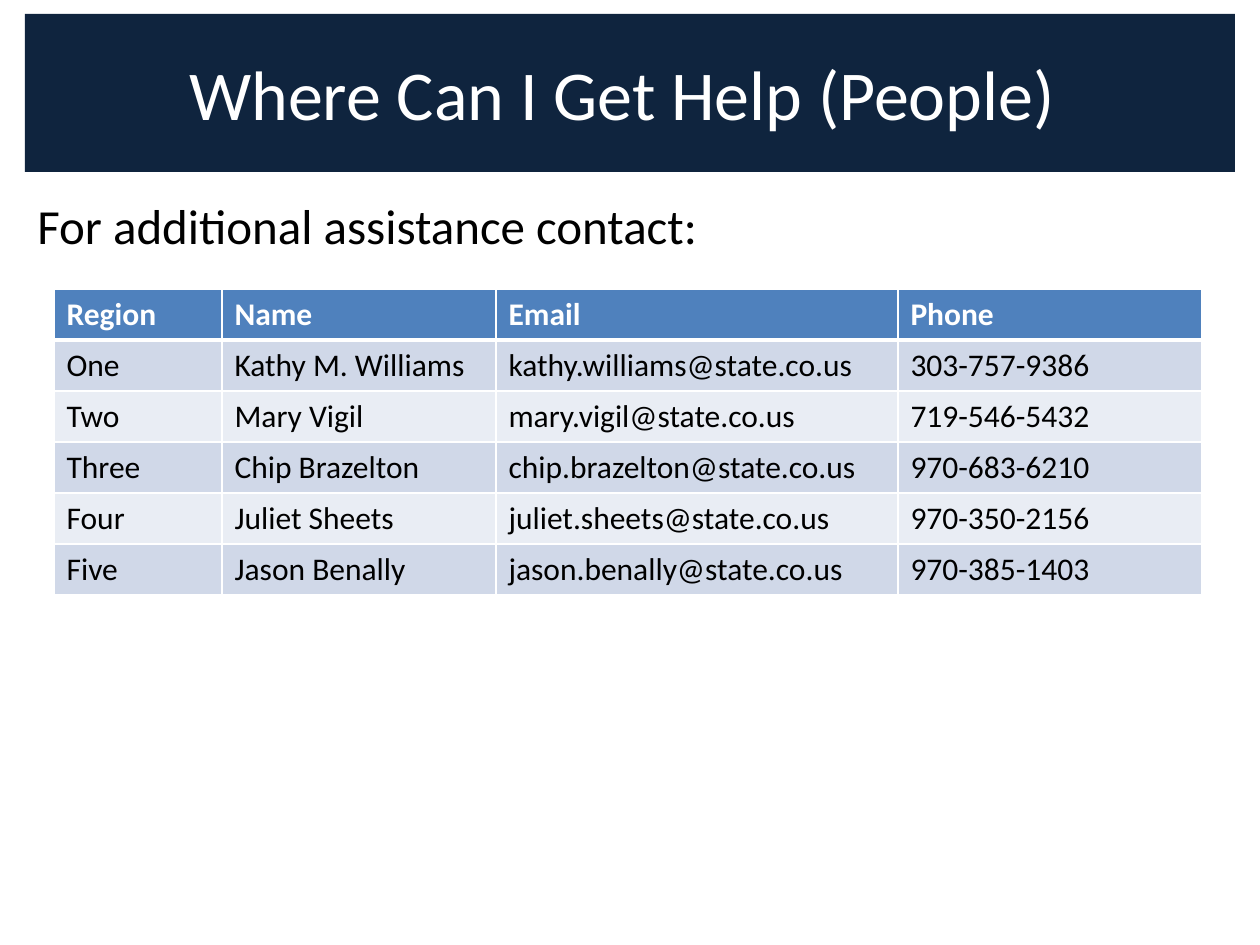
from dataclasses import dataclass

from lxml import etree
from pptx import Presentation
from pptx.dml.color import RGBColor
from pptx.enum.shapes import MSO_SHAPE
from pptx.enum.text import MSO_ANCHOR, PP_ALIGN
from pptx.oxml.ns import qn
from pptx.util import Emu, Pt

RECTANGLE = MSO_SHAPE.RECTANGLE
MIDDLE = MSO_ANCHOR.MIDDLE
TOP = MSO_ANCHOR.TOP
CENTER = PP_ALIGN.CENTER
LEFT = PP_ALIGN.LEFT
EMU_PER_PX = 914400 // 126


@dataclass(frozen=True)
class Theme:
    font: str = "Calibri"
    navy: str = "0F243E"
    header: str = "4F81BD"
    bands: tuple = ("D0D8E8", "E9EDF4")
    white: str = "FFFFFF"
    black: str = "000000"
    title_size: int = 40
    body_size: int = 28
    table_size: int = 18
    thin_border: int = 1
    thick_border: int = 3


THEME = Theme()
COLUMN_WIDTHS = (168, 274, 402, 304)
ROW_HEIGHT = 51
CONTACTS = (
    ("Region", "Name", "Email", "Phone"),
    ("One", "Kathy M. Williams", "kathy.williams@state.co.us", "303-757-9386"),
    ("Two", "Mary Vigil", "mary.vigil@state.co.us", "719-546-5432"),
    ("Three", "Chip Brazelton", "chip.brazelton@state.co.us", "970-683-6210"),
    ("Four", "Juliet Sheets", "juliet.sheets@state.co.us", "970-350-2156"),
    ("Five", "Jason Benally", "jason.benally@state.co.us", "970-385-1403"),
)


def px(*lengths):
    return [Emu(length * EMU_PER_PX) for length in lengths]


def apply_format(target, values):
    for name, value in values.items():
        setattr(target, name, value)


def fill_solid(target, color):
    target.fill.solid()
    target.fill.fore_color.rgb = RGBColor.from_string(color)


def write_text(text_frame, text, size, color, bold=False, **paragraph_format):
    paragraph = text_frame.paragraphs[0]
    apply_format(paragraph, paragraph_format)
    run = paragraph.add_run()
    run.text = text
    apply_format(run.font, {"name": THEME.font, "size": Pt(size), "bold": bold})
    run.font.color.rgb = RGBColor.from_string(color)


def add_title(slide, text):
    shape = slide.shapes.add_shape(RECTANGLE, *px(25, 14, 1210, 158))
    shape.shadow.inherit = False
    fill_solid(shape, THEME.navy)
    shape.line.fill.background()
    apply_format(shape.text_frame, {"word_wrap": True, "vertical_anchor": MIDDLE})
    write_text(shape.text_frame, text, THEME.title_size, THEME.white, alignment=CENTER)


def add_body(slide, text):
    shape = slide.shapes.add_textbox(*px(25, 189, 1210, 680))
    apply_format(shape.text_frame, {"word_wrap": True, "vertical_anchor": TOP})
    write_text(shape.text_frame, text, THEME.body_size, THEME.black,
               alignment=LEFT, space_before=Pt(THEME.body_size * 0.2))


def set_borders(cell, top, bottom):
    properties = cell._tc.get_or_add_tcPr()
    sides = {"lnL": THEME.thin_border, "lnR": THEME.thin_border, "lnT": top, "lnB": bottom}
    for index, (tag, width) in enumerate(sides.items()):
        line = etree.Element(qn(f"a:{tag}"), w=str(Pt(width)))
        fill = etree.SubElement(line, qn("a:solidFill"))
        etree.SubElement(fill, qn("a:srgbClr"), val=THEME.white)
        properties.insert(index, line)


def add_contact_table(slide, rows):
    frame = slide.shapes.add_table(
        len(rows), len(COLUMN_WIDTHS),
        *px(54, 289, sum(COLUMN_WIDTHS), ROW_HEIGHT * len(rows)))
    table = frame.table
    for column, width in zip(table.columns, px(*COLUMN_WIDTHS)):
        column.width = width
    for row_index, values in enumerate(rows):
        is_header = row_index == 0
        fill = THEME.header if is_header else THEME.bands[(row_index - 1) % 2]
        color = THEME.white if is_header else THEME.black
        top = THEME.thick_border if row_index == 1 else THEME.thin_border
        bottom = THEME.thick_border if is_header else THEME.thin_border
        for column_index, text in enumerate(values):
            cell = table.cell(row_index, column_index)
            fill_solid(cell, fill)
            set_borders(cell, top, bottom)
            write_text(cell.text_frame, text, THEME.table_size, color, bold=is_header)


def main():
    presentation = Presentation()
    width, height = px(1260, 945)
    apply_format(presentation, {"slide_width": width, "slide_height": height})
    slide = presentation.slides.add_slide(presentation.slide_layouts[6])
    add_body(slide, "For additional assistance contact:")
    add_title(slide, "Where Can I Get Help (People) ")
    add_contact_table(slide, CONTACTS)
    presentation.save("out.pptx")


if __name__ == "__main__":
    main()
